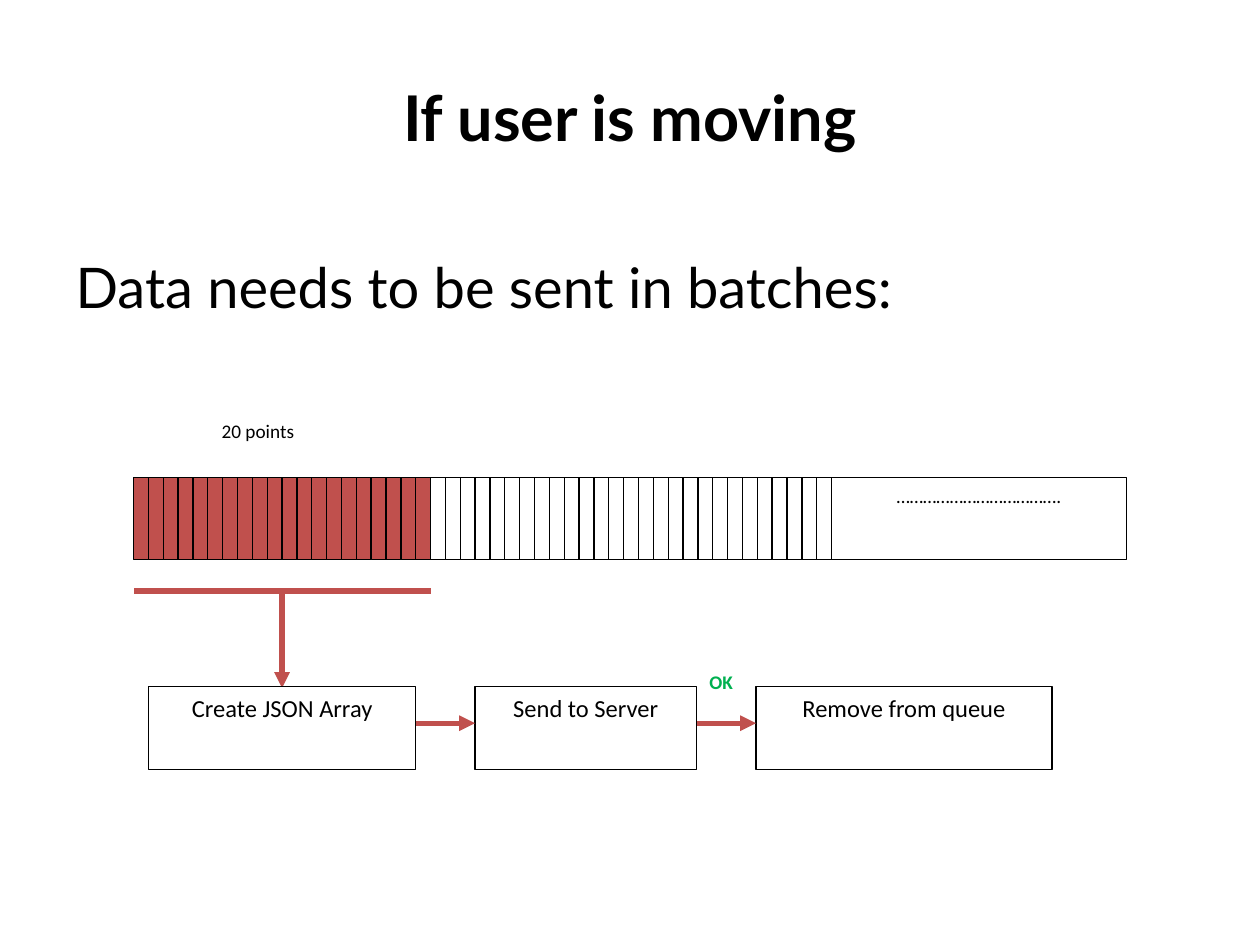
import pptx
import pptx.util
import pptx.dml.color
import pptx.enum.shapes
import pptx.enum.text
import pptx.oxml.ns
import lxml.etree

Inches = pptx.util.Inches
Pt = pptx.util.Pt
qn = pptx.oxml.ns.qn
ALIGN = pptx.enum.text.PP_ALIGN
ANCHOR = pptx.enum.text.MSO_ANCHOR

COLORS = {"ink": "000000", "paper": "FFFFFF", "batch": "C0504D", "ok": "00B050"}


def rgb(name):
    return pptx.dml.color.RGBColor.from_string(COLORS[name])


def set_attrs(obj, values):
    for name, value in values.items():
        setattr(obj, name, value)


def place(sp, box):
    set_attrs(sp, dict(zip(("left", "top", "width", "height"), map(Inches, box))))


def write(tf, text, size, font="Calibri", color="ink", bold=False, **para):
    p = tf.paragraphs[0]
    set_attrs(p, para)
    r = p.add_run()
    r.text = text
    set_attrs(r.font, {"size": Pt(size), "name": font, "bold": bold})
    r.font.color.rgb = rgb(color)
    return p


def add_box(s, box, fill="paper", outlined=True):
    sp = s.shapes.add_shape(pptx.enum.shapes.MSO_SHAPE.RECTANGLE, *map(Inches, box))
    sp.shadow.inherit = False
    sp.fill.solid()
    sp.fill.fore_color.rgb = rgb(fill)
    if outlined:
        sp.line.color.rgb = rgb("ink")
        sp.line.width = Pt(0.75)
    else:
        sp.line.fill.background()
    return sp


def add_label(s, box, text, size, outlined=True, align=ALIGN.CENTER, **font):
    sp = add_box(s, box, outlined=outlined)
    set_attrs(sp.text_frame, {"word_wrap": True, "vertical_anchor": ANCHOR.TOP})
    write(sp.text_frame, text, size, alignment=align, space_after=Pt(10), **font)


def add_line(s, x1, y1, x2, y2, arrow=True):
    sp = s.shapes.add_connector(
        pptx.enum.shapes.MSO_CONNECTOR.STRAIGHT, *map(Inches, (x1, y1, x2, y2)))
    sp.line.color.rgb = rgb("batch")
    sp.line.width = Pt(3)
    if arrow:
        lxml.etree.SubElement(sp.line._get_or_add_ln(), qn("a:tailEnd"), type="triangle")
    lxml.etree.SubElement(sp._element.spPr, qn("a:effectLst"))


def add_title(s, box):
    sp = s.shapes.title
    place(sp, box)
    sp.text_frame.vertical_anchor = ANCHOR.MIDDLE
    write(sp.text_frame, "If user is moving", 36, "Lato", bold=True, alignment=ALIGN.CENTER)


def add_body(s, box):
    sp = s.placeholders[1]
    place(sp, box)
    p = write(sp.text_frame, "Data needs to be sent in batches:", 32, "Lato")
    pPr = p._p.get_or_add_pPr()
    pPr.set("marL", str(Inches(0.38)))
    pPr.set("indent", str(-Inches(0.38)))
    lxml.etree.SubElement(pPr, qn("a:buNone"))


def add_queue(s, box, cells=47, batch=20, rest=2.34):
    left, top, width, height = box
    step = (width - rest) / cells
    add_label(s, (left + 0.6, top - 0.51, 1.18, 0.57), "20 points", 11,
              outlined=False, align=ALIGN.LEFT)
    for i in range(cells):
        add_box(s, (left + i * step, top, step, height), "batch" if i < batch else "paper")
    add_label(s, (left + width - rest, top, rest, height), "……………………………….", 11)
    bar_y = top + height + 0.25
    middle = left + batch * step / 2
    add_line(s, left + batch * step, bar_y, left, bar_y, arrow=False)
    add_line(s, middle, bar_y, middle, bar_y + 0.77)


def add_steps(s, box, gap=0.47):
    left, top, width, height = box
    steps = [("Create JSON Array", 2.12), ("Send to Server", 1.76), ("Remove from queue", 2.35)]
    add_label(s, (left + 4.18, top - 0.18, 0.73, 0.6), "OK", 11,
              outlined=False, color="ok", bold=True)
    x = left
    for i, (text, w) in enumerate(steps):
        add_label(s, (x, top, w, height), text, 14)
        if i:
            add_line(s, x - gap, top + 0.29, x, top + 0.29)
        x += w + gap


def main():
    prs = pptx.Presentation()
    set_attrs(prs, {"slide_width": Inches(10), "slide_height": Inches(7.5)})
    s = prs.slides.add_slide(prs.slide_layouts[1])
    add_title(s, (0.5, 0.3, 9, 1.25))
    add_body(s, (0.5, 1.95, 9, 1.56))
    add_queue(s, (1.06, 3.79, 7.88, 0.65))
    add_steps(s, (1.18, 5.45, 7.17, 0.66))
    prs.save("out.pptx")


if __name__ == "__main__":
    main()
